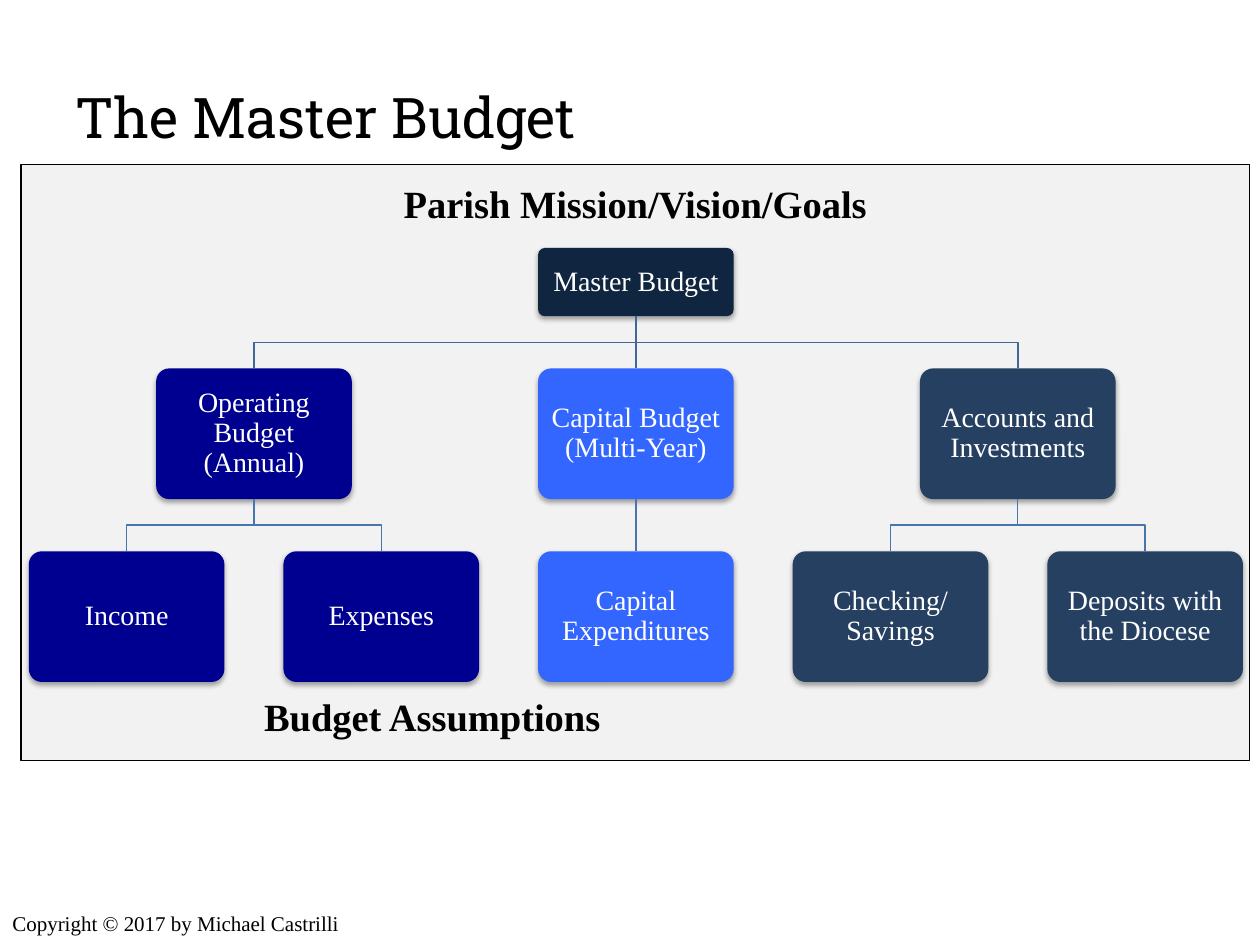
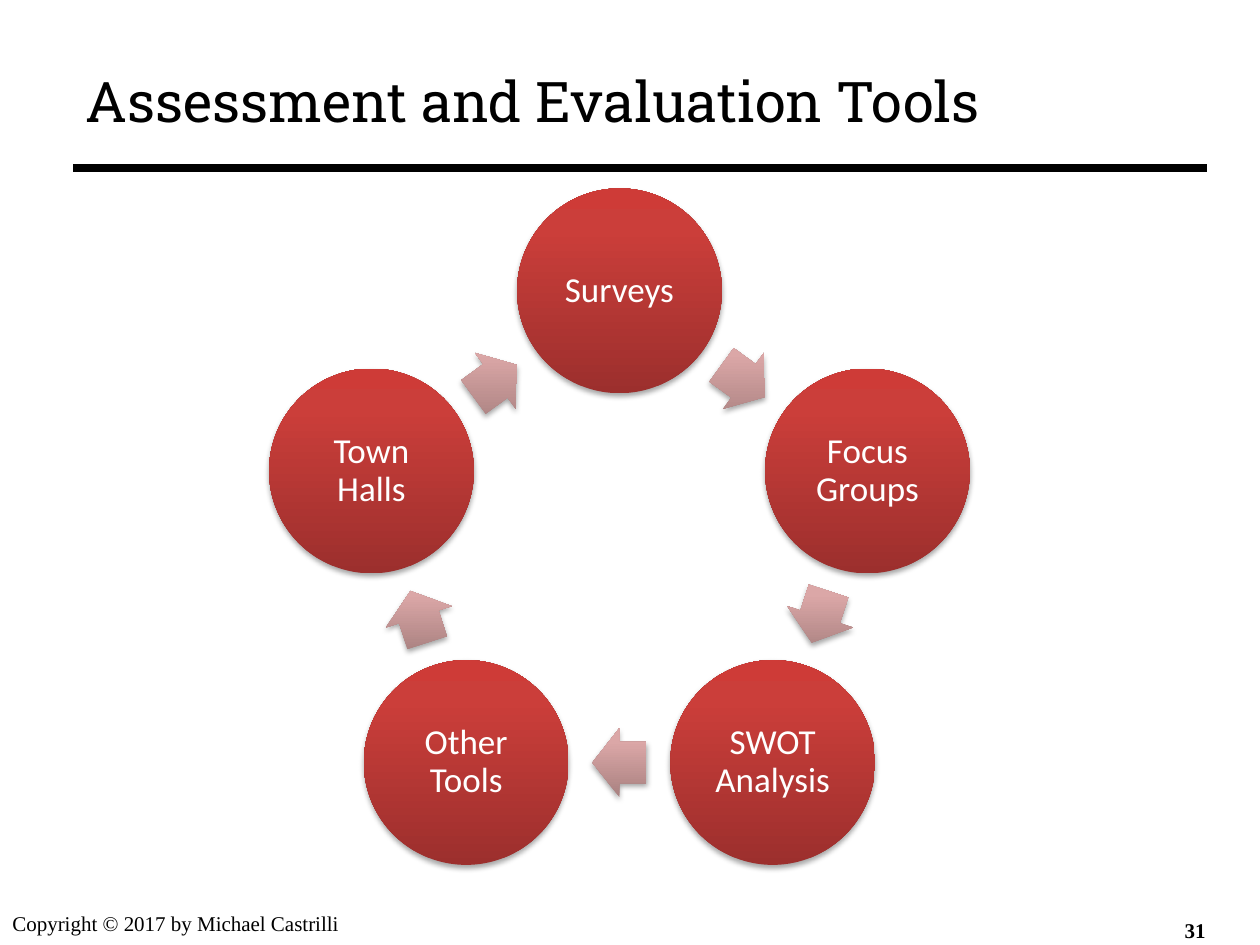
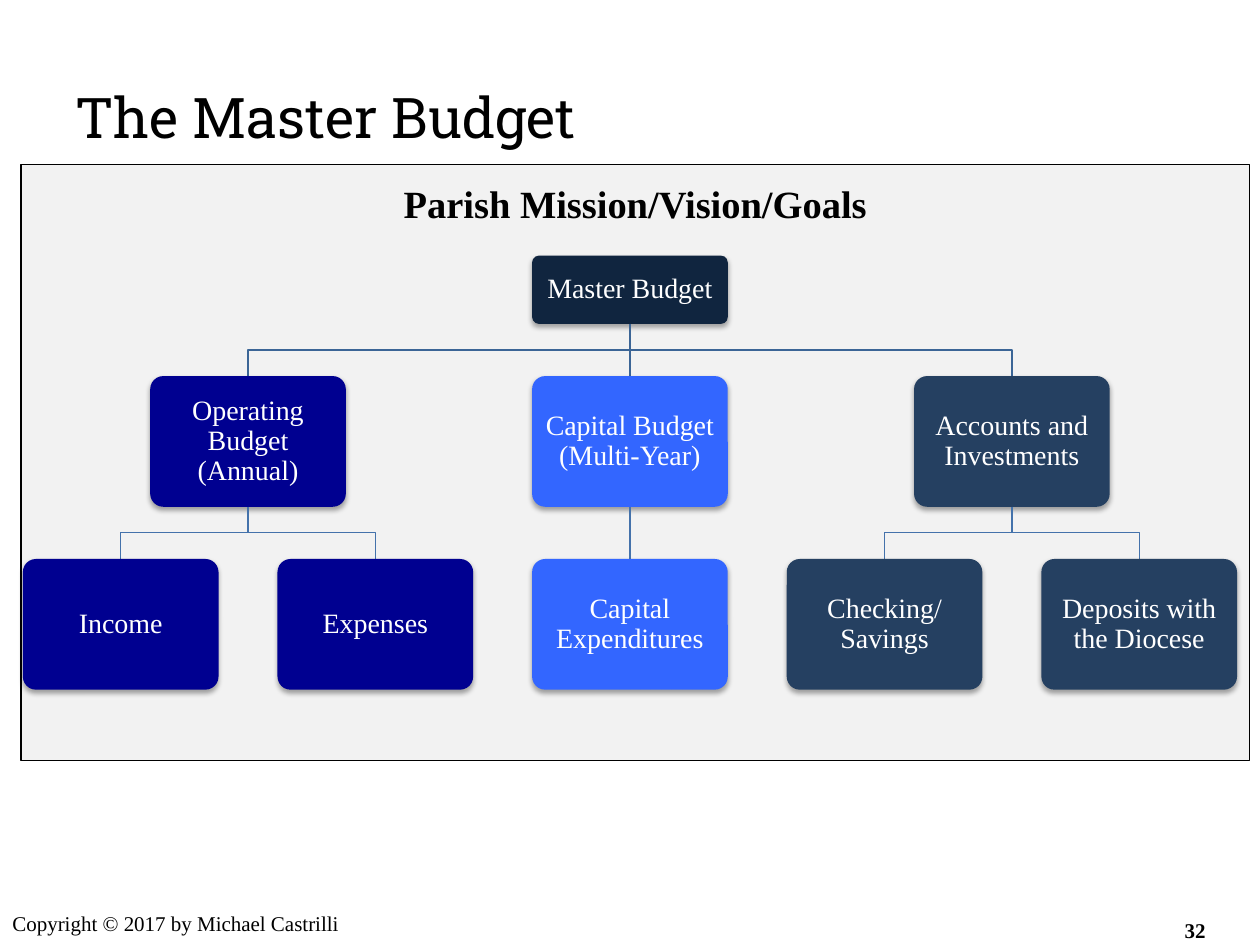
"""Builds three budget slides: two master budget trees and a cycle of assessment tools."""
import math
from lxml import etree
from pptx import Presentation
from pptx.dml.color import RGBColor
from pptx.enum.shapes import MSO_CONNECTOR, MSO_SHAPE
from pptx.enum.text import MSO_ANCHOR, PP_ALIGN
from pptx.oxml.ns import qn
from pptx.util import Pt

LEFT, CENTER, RIGHT = PP_ALIGN.LEFT, PP_ALIGN.CENTER, PP_ALIGN.RIGHT
TOP, MIDDLE = MSO_ANCHOR.TOP, MSO_ANCHOR.MIDDLE
STRAIGHT = MSO_CONNECTOR.STRAIGHT
RECT, ROUNDED = MSO_SHAPE.RECTANGLE, MSO_SHAPE.ROUNDED_RECTANGLE
OVAL, ARROW = MSO_SHAPE.OVAL, MSO_SHAPE.RIGHT_ARROW

COLORS = {
    "black": "000000", "white": "FFFFFF", "panel": "F2F2F2", "root": "10253F",
    "operating": "000090", "capital": "3366FF", "accounts": "254061",
    "upper_1": "3F6797", "lower_1": "4875AC",
    "upper_2": "3B6596", "lower_2": "4472AB",
}
RED = [(0, "9C2F2D"), (80, "CB3E3A"), (100, "CE3B37")]
PINK = [(0, "A98180"), (80, "DBA7A7"), (100, "DDA7A6")]
SERIF, SLAB, SANS = "Times New Roman", "Roboto Slab", "Calibri"

COPYRIGHT = "Copyright © 2017 by Michael Castrilli"
TREE_TITLE = "The Master Budget"
GOALS = "Parish Mission/Vision/Goals"
ASSUMPTIONS = "Budget Assumptions"
ROOT = "Master Budget"
BRANCHES = [
    ("Operating Budget (Annual)", "operating", ["Income", "Expenses"]),
    ("Capital Budget (Multi-Year)", "capital", ["Capital Expenditures"]),
    ("Accounts and Investments", "accounts", ["Checking/Savings", "Deposits with the Diocese"]),
]
CYCLE_TITLE = "Assessment and Evaluation Tools"
TOOLS = ["Surveys", "Focus Groups", "SWOT Analysis", "Other Tools", "Town Halls"]

BOX_W, BOX_H, ROOT_H = 111.8, 74.7, 39
LEVEL_GAP, PITCH = 29.8, 145.5
CYCLE_X, CYCLE_Y, RADIUS, CIRCLE = 354, 315.2, 149, 117
ARROW_W, ARROW_H = 31, 39.5


def rgb(name):
    return RGBColor.from_string(COLORS[name])


def write(sp, text, size, font=SERIF, color="black", bold=False, align=LEFT,
          anchor=MIDDLE, margin=None, spacing=None):
    tf = sp.text_frame
    tf.word_wrap = True
    tf.vertical_anchor = anchor
    if margin is not None:
        tf.margin_left = tf.margin_right = tf.margin_top = tf.margin_bottom = Pt(margin)
    p = tf.paragraphs[0]
    p.text = text
    p.alignment = align
    p.line_spacing = spacing
    p.font.name, p.font.size, p.font.bold = font, Pt(size), bold
    p.font.color.rgb = rgb(color)


def add_text(s, x, y, w, h, text, size, **style):
    write(s.shapes.add_textbox(Pt(x), Pt(y), Pt(w), Pt(h)), text, size, **style)


def add_shape(s, kind, x, y, w, h, fill=None, adjust=()):
    sp = s.shapes.add_shape(kind, Pt(x), Pt(y), Pt(w), Pt(h))
    sp.shadow.inherit = False
    sp.line.fill.background()
    if fill:
        sp.fill.solid()
        sp.fill.fore_color.rgb = rgb(fill)
    for i, value in enumerate(adjust):
        sp.adjustments[i] = value
    return sp


def add_color(parent, color):
    return etree.SubElement(parent, qn("a:srgbClr"), val=color)


def cast_shadow(sp):
    effects = sp.element.spPr.find(qn("a:effectLst"))
    shadow = etree.SubElement(effects, qn("a:outerShdw"), blurRad=str(Pt(3.1)),
                              dist=str(Pt(1.8)), dir="5400000", rotWithShape="0")
    etree.SubElement(add_color(shadow, COLORS["black"]), qn("a:alpha"), val="35000")


def shade(sp, stops):
    sp.fill.gradient()
    sp.fill.gradient_angle = 90
    grad = sp.element.spPr.find(qn("a:gradFill"))
    grad.set("rotWithShape", "0")
    gs_list = grad.find(qn("a:gsLst"))
    for gs in list(gs_list):
        gs_list.remove(gs)
    for pos, color in stops:
        add_color(etree.SubElement(gs_list, qn("a:gs"), pos=str(pos * 1000)), color)


def add_line(s, x1, y1, x2, y2, color, width):
    line = s.shapes.add_connector(STRAIGHT, Pt(x1), Pt(y1), Pt(x2), Pt(y2))
    line.line.color.rgb = rgb(color)
    line.line.width = Pt(width)
    etree.SubElement(line.element.spPr, qn("a:effectLst"))


def add_branch_line(s, x1, y1, x2, color):
    y2, mid = y1 + LEVEL_GAP, y1 + LEVEL_GAP / 2
    if x1 == x2:
        add_line(s, x1, y1, x2, y2, color, 0.75)
        return
    outline = s.shapes.build_freeform(Pt(x1), Pt(y1))
    outline.add_line_segments([(Pt(x1), Pt(mid)), (Pt(x2), Pt(mid)), (Pt(x2), Pt(y2))], close=False)
    sp = outline.convert_to_shape()
    sp.shadow.inherit = False
    sp.fill.background()
    sp.line.color.rgb = rgb(color)
    sp.line.width = Pt(0.75)


def add_box(s, center, y, h, text, fill):
    sp = add_shape(s, ROUNDED, center - BOX_W / 2, y, BOX_W, h, fill, [0.1])
    cast_shadow(sp)
    write(sp, text, 16, color="white", align=CENTER, margin=5, spacing=0.9)


def add_slide(prs, title, x, y, number=None):
    s = prs.slides.add_slide(prs.slide_layouts[6])
    add_text(s, 0, 517, 294, 29, COPYRIGHT, 12, anchor=TOP)
    add_text(s, x, y, 648, 90, title, 32, font=SLAB)
    if number:
        add_text(s, 528, 517, 168, 29, str(number), 12, bold=True, align=RIGHT)
    return s


def add_tree_slide(prs, center, top, upper, lower, number=None):
    s = add_slide(prs, TREE_TITLE, 36, 21.6, number)
    panel = add_shape(s, RECT, 12, 94, 702, 340.5, "panel")
    panel.line.color.rgb = rgb("black")
    panel.line.width = Pt(0.75)
    write(panel, GOALS, 22, bold=True, align=CENTER, anchor=TOP, margin=12, spacing=0.9)

    branch_y = top + ROOT_H + LEVEL_GAP
    leaf_y = branch_y + BOX_H + LEVEL_GAP
    slot = -(sum(len(leaves) for _, _, leaves in BRANCHES) - 1) / 2
    add_box(s, center, top, ROOT_H, ROOT, "root")
    for name, fill, leaves in BRANCHES:
        xs = [center + (slot + i) * PITCH for i in range(len(leaves))]
        slot += len(leaves)
        x = sum(xs) / len(xs)
        add_branch_line(s, center, top + ROOT_H, x, upper)
        add_box(s, x, branch_y, BOX_H, name, fill)
        for leaf_x, leaf in zip(xs, leaves):
            add_branch_line(s, x, branch_y + BOX_H, leaf_x, lower)
            add_box(s, leaf_x, leaf_y, BOX_H, leaf, fill)
    return s


def add_cycle_slide(prs, number):
    s = add_slide(prs, CYCLE_TITLE, 42, 12, number)
    add_line(s, 42, 96, 690, 96, "black", 5)
    step = 360 / len(TOOLS)
    for i, tool in enumerate(TOOLS):
        angle = math.radians(i * step)
        x, y = CYCLE_X + RADIUS * math.sin(angle), CYCLE_Y - RADIUS * math.cos(angle)
        circle = add_shape(s, OVAL, x - CIRCLE / 2, y - CIRCLE / 2, CIRCLE, CIRCLE)
        shade(circle, RED)
        cast_shadow(circle)
        write(circle, tool, 20, font=SANS, color="white", align=CENTER, margin=2, spacing=0.9)

        turn = (i + 0.5) * step
        reach = RADIUS * math.cos(math.radians(step / 2))
        x = CYCLE_X + reach * math.sin(math.radians(turn))
        y = CYCLE_Y - reach * math.cos(math.radians(turn))
        arrow = add_shape(s, ARROW, x - ARROW_W / 2, y - ARROW_H / 2, ARROW_W, ARROW_H,
                          adjust=[0.6, 0.5])
        arrow.rotation = turn
        shade(arrow, PINK)
        cast_shadow(arrow)


def main():
    prs = Presentation()
    prs.slide_width, prs.slide_height = Pt(720), Pt(540)
    s = add_tree_slide(prs, 363.4, 141.7, "upper_1", "lower_1")
    add_text(s, 40, 368.6, 414, 85, ASSUMPTIONS, 22, bold=True, align=CENTER,
             margin=12, spacing=0.9)
    add_cycle_slide(prs, 31)
    add_tree_slide(prs, 360, 146.1, "upper_2", "lower_2", 32)
    prs.save("out.pptx")


if __name__ == "__main__":
    main()
